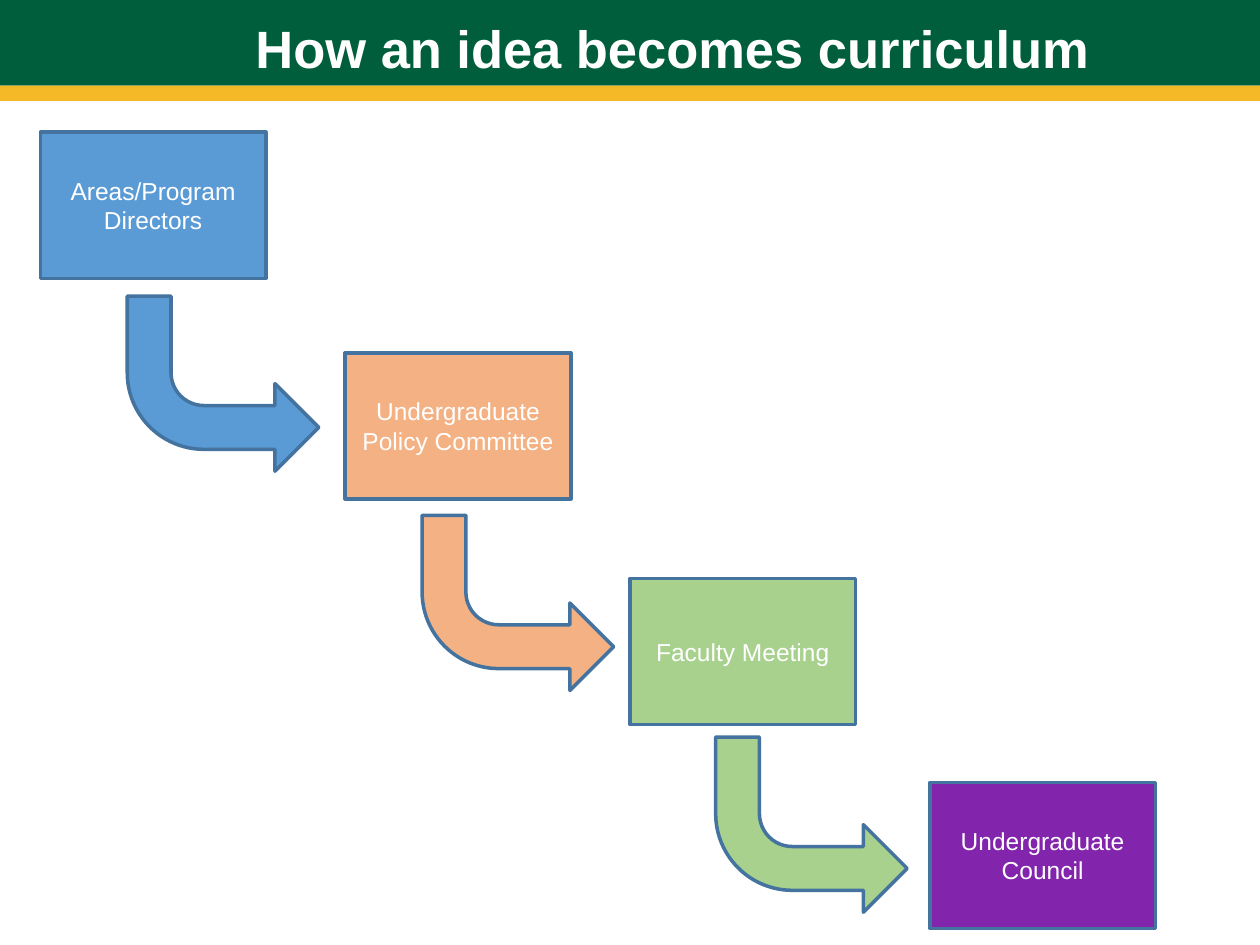
"""Build a slide showing the four approval steps from idea to curriculum."""
from typing import NamedTuple, Optional

from pptx import Presentation
from pptx.dml.color import RGBColor
from pptx.enum.shapes import MSO_SHAPE as Preset
from pptx.enum.text import MSO_ANCHOR as Anchor, MSO_AUTO_SIZE as AutoSize, PP_ALIGN as Align
from pptx.oxml.ns import qn
from pptx.util import Inches, Pt

GREEN = RGBColor(0x00, 0x5E, 0x3C)
GOLD = RGBColor(0xF5, 0xB8, 0x27)
WHITE = RGBColor(0xFF, 0xFF, 0xFF)
OUTLINE = RGBColor(0x43, 0x73, 0x9E)
BLUE = RGBColor(0x5B, 0x9B, 0xD5)
ORANGE = RGBColor(0xF4, 0xB1, 0x83)
LIGHT_GREEN = RGBColor(0xA9, 0xD1, 0x8E)
PURPLE = RGBColor(0x82, 0x24, 0xAC)

STEP_SIZE = (1.79, 1.16)
ARROW_SIZE = (1.52, 1.39)


class Step(NamedTuple):
    label: str
    color: RGBColor
    corner: tuple[float, float]
    arrow_corner: Optional[tuple[float, float]] = None


STEPS = [
    Step("Areas/Program Directors", BLUE, (0.32, 1.05), (1.01, 2.35)),
    Step("Undergraduate Policy Committee", ORANGE, (2.74, 2.8), (3.35, 4.09)),
    Step("Faculty Meeting", LIGHT_GREEN, (5, 4.59), (5.68, 5.85)),
    Step("Undergraduate Council", PURPLE, (7.38, 6.21)),
]


def add_filled(slide, preset, corner, size, color: RGBColor, outlined: bool = True):
    shape = slide.shapes.add_shape(preset, *map(Inches, (*corner, *size)))
    shape.shadow.inherit = False
    shape.fill.solid()
    shape.fill.fore_color.rgb = color
    if outlined:
        shape.line.color.rgb = OUTLINE
        shape.line.width = Pt(2)
    else:
        shape.line.fill.background()
    return shape


def write(frame, text: str, size: float, align, anchor, bold: bool = False):
    frame.word_wrap = True
    frame.vertical_anchor = anchor
    paragraph = frame.paragraphs[0]
    paragraph.alignment = align
    run = paragraph.add_run()
    run.text = text
    run.font.name = "Arial"
    run.font.size = Pt(size)
    run.font.bold = bold
    run.font.color.rgb = WHITE
    return paragraph


def add_header(slide) -> None:
    add_filled(slide, Preset.RECTANGLE, (-0.01, 0), (10.01, 0.68), GREEN, outlined=False)
    add_filled(slide, Preset.RECTANGLE, (-0.01, 0.68), (10.01, 0.12), GOLD, outlined=False)
    title = slide.shapes.title
    slide.shapes._spTree.append(title._element)
    title.left, title.top, title.width, title.height = map(Inches, (0.32, 0.13, 8.43, 0.47))
    title.text_frame.auto_size = AutoSize.NONE
    heading = write(title.text_frame, "How an idea becomes curriculum", 30,
                    Align.RIGHT, Anchor.TOP, bold=True)
    heading.line_spacing = 0.9


def add_step(slide, step: Step) -> None:
    box = add_filled(slide, Preset.RECTANGLE, step.corner, STEP_SIZE, step.color)
    write(box.text_frame, step.label, 14, Align.CENTER, Anchor.MIDDLE)
    if step.arrow_corner:
        arrow = add_filled(slide, Preset.BENT_ARROW, step.arrow_corner, ARROW_SIZE, step.color)
        arrow._element.spPr.find(qn("a:xfrm")).set("flipV", "1")


def main() -> None:
    deck = Presentation()
    deck.slide_width, deck.slide_height = Inches(10), Inches(7.5)
    slide = deck.slides.add_slide(deck.slide_layouts.get_by_name("Title Only"))
    add_header(slide)
    for step in STEPS:
        add_step(slide, step)
    deck.save("out.pptx")


if __name__ == "__main__":
    main()
